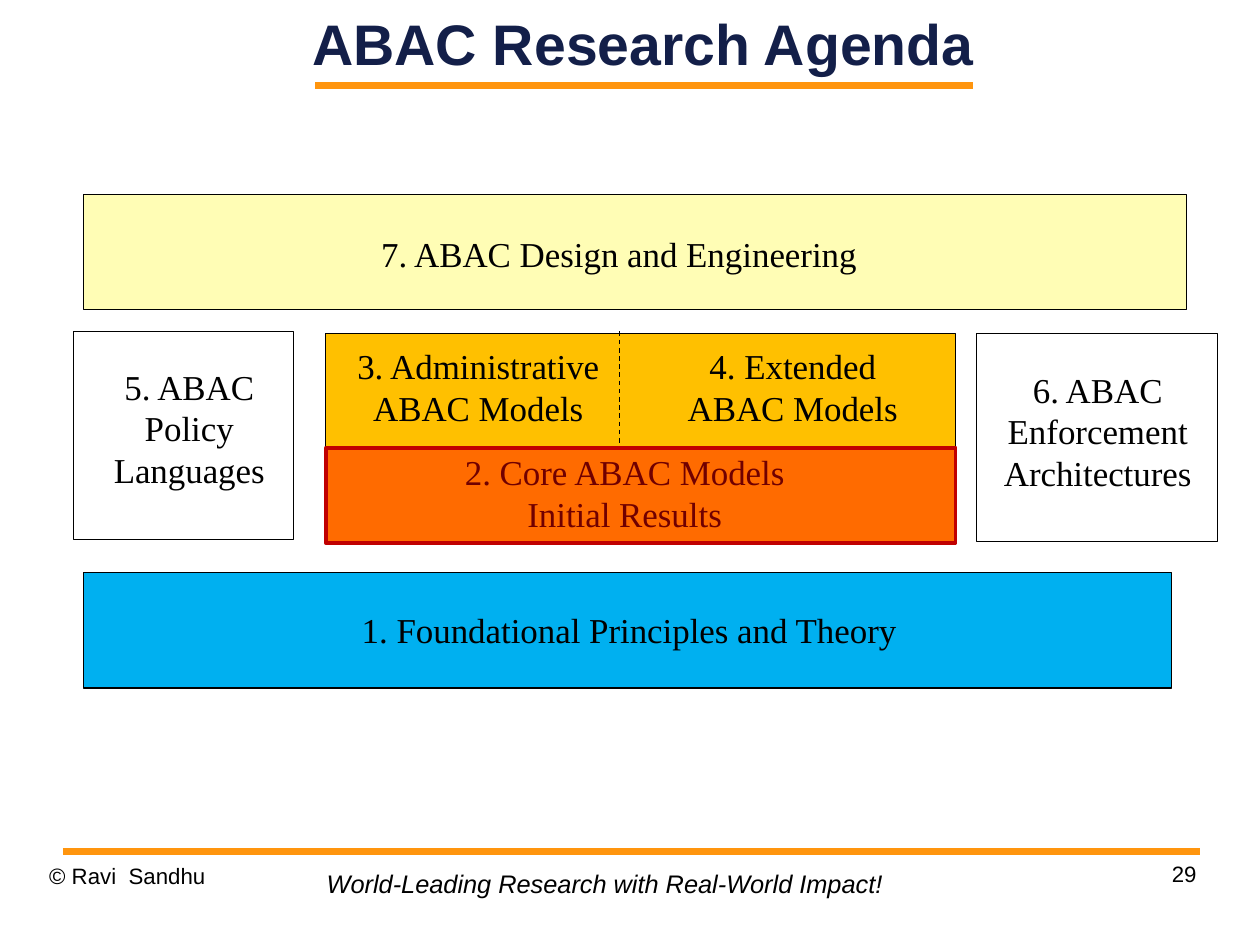
from dataclasses import dataclass
from lxml.etree import SubElement
from pptx import Presentation
from pptx.dml.color import RGBColor
from pptx.enum.dml import MSO_LINE
from pptx.enum.shapes import MSO_CONNECTOR, MSO_SHAPE
from pptx.enum.text import MSO_ANCHOR, PP_ALIGN
from pptx.oxml.ns import qn
from pptx.util import Pt


@dataclass(frozen=True)
class Theme:
    sans: str = "Arial"
    serif: str = "Times New Roman"
    ink: str = "000000"
    navy: str = "131F49"
    rule: str = "FF950E"
    white: str = "FFFFFF"
    cream: str = "FFFDB5"
    gold: str = "FFC000"
    blue: str = "00B0F0"
    red: str = "FF0000"
    edge: str = "C00000"
    title: int = 36
    label: int = 22
    motto: int = 16
    small: int = 14
    thin: float = 0.75
    bold: float = 2.5
    bar: float = 4.31


class Board:
    def __init__(self, slide, theme):
        self.slide = slide
        self.theme = theme

    def line(self, start, end, color, width, dash=False):
        link = self.slide.shapes.add_connector(
            MSO_CONNECTOR.STRAIGHT, *map(Pt, start + end))
        link.line.color.rgb = RGBColor.from_string(color)
        link.line.width = Pt(width)
        if dash:
            link.line.dash_style = MSO_LINE.DASH
        SubElement(link._element.spPr, qn("a:effectLst"))

    def box(self, place, fill, edge, width, alpha=None):
        box = self.slide.shapes.add_shape(MSO_SHAPE.RECTANGLE, *map(Pt, place))
        box.shadow.inherit = False
        box.fill.solid()
        box.fill.fore_color.rgb = RGBColor.from_string(fill)
        box.line.color.rgb = RGBColor.from_string(edge)
        box.line.width = Pt(width)
        if alpha:
            tint = box._element.spPr.find(qn("a:solidFill"))[0]
            SubElement(tint, qn("a:alpha"), val=str(alpha * 1000))

    def text(self, place, lines, size, font, color, align=PP_ALIGN.LEFT,
             inset=(0, 0), anchor=MSO_ANCHOR.TOP, bold=False, slant=False):
        frame = self.slide.shapes.add_textbox(*map(Pt, place)).text_frame
        frame.word_wrap = True
        frame.vertical_anchor = anchor
        frame.margin_left = frame.margin_right = Pt(inset[0])
        frame.margin_top = frame.margin_bottom = Pt(inset[1])
        frame.text = lines
        for para in frame.paragraphs:
            para.alignment = align
            para.font.size = Pt(size)
            para.font.name = font
            para.font.bold = bold
            para.font.italic = slant
            para.font.color.rgb = RGBColor.from_string(color)

    def label(self, place, lines):
        self.text(place, lines, self.theme.label, self.theme.serif,
                  self.theme.ink, PP_ALIGN.CENTER, (7.9, 3.9))


def main():
    deck = Presentation()
    deck.slide_width, deck.slide_height = Pt(793.7), Pt(595.28)
    look = Theme()
    board = Board(deck.slides.add_slide(deck.slide_layouts[6]), look)

    board.line((198.7, 54), (612.7, 54), look.rule, look.bar)
    board.line((39.6, 536.4), (756, 536.4), look.rule, look.bar)
    board.text((173.5, 0, 463, 54), "ABAC Research Agenda", look.title,
               look.sans, look.navy, PP_ALIGN.CENTER,
               anchor=MSO_ANCHOR.MIDDLE, bold=True)
    board.text((31, 543.4, 185, 41), "© Ravi  Sandhu", look.small,
               look.sans, look.ink)
    board.text((198.7, 543.6, 380, 26.6),
               "World-Leading Research with Real-World Impact!", look.motto,
               look.sans, look.ink, inset=(7.2, 3.6), slant=True)
    board.text((568.8, 542.2, 185, 41), "29", look.small, look.sans,
               look.ink, PP_ALIGN.RIGHT)

    for place, fill in (
        ((52.6, 122.4, 694.8, 72.7), look.cream),
        ((46.1, 208.8, 139, 131), look.white),
        ((205.2, 210.2, 396.7, 131), look.gold),
        ((614.9, 210.2, 152, 131), look.white),
        ((52.6, 360.7, 685.4, 72.7), look.blue),
    ):
        board.box(place, fill, look.ink, look.thin)

    board.line((205.2, 281.7), (601.9, 281.7), look.ink, look.thin, True)
    board.line((390.2, 208.8), (390.2, 281.5), look.ink, look.thin, True)

    for place, lines in (
        ((99.4, 142.6, 581, 34.6), "7. ABAC Design and Engineering"),
        ((59.8, 226.1, 118.8, 87.8), "5. ABAC Policy Languages"),
        ((212.4, 213.1, 177.8, 61.2), "3. Administrative\nABAC Models"),
        ((416.9, 213.1, 164.9, 61.2), "4. Extended\nABAC Models"),
        ((622, 228, 139, 87.8), "6. ABAC Enforcement Architectures"),
        ((218.2, 280, 350.6, 61.2), "2. Core ABAC Models\nInitial Results"),
        ((105.8, 379.4, 581, 34.6), "1. Foundational Principles and Theory"),
    ):
        board.label(place, lines)

    board.box((205.2, 282.2, 396.7, 59.8), look.red, look.edge, look.bold, 44)
    deck.save("out.pptx")


if __name__ == "__main__":
    main()
